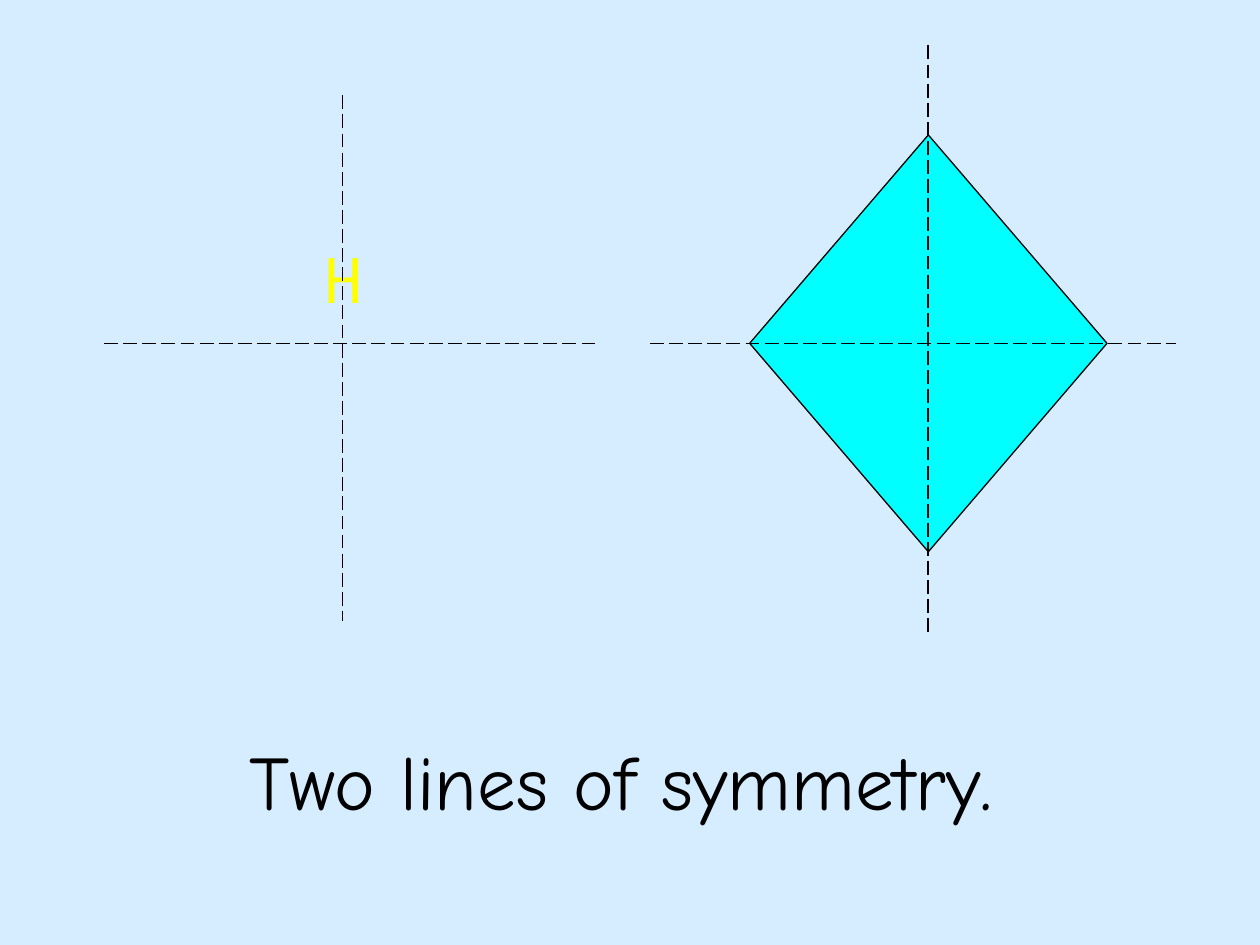
from dataclasses import dataclass

from lxml.etree import SubElement
from pptx import Presentation
from pptx.dml.color import RGBColor
from pptx.enum.dml import MSO_LINE
from pptx.enum.shapes import MSO_CONNECTOR, MSO_SHAPE
from pptx.enum.text import MSO_ANCHOR as Anchor, PP_ALIGN as Align
from pptx.oxml.ns import qn
from pptx.slide import Slide
from pptx.util import Pt

COLORS = {"sky": "D6ECFF", "ink": "000000", "letter": "FFFF00", "diamond": "00FFFF"}


@dataclass(frozen=True)
class Box:
    left: float
    top: float
    width: float
    height: float

    def lengths(self) -> tuple:
        return Pt(self.left), Pt(self.top), Pt(self.width), Pt(self.height)


@dataclass(frozen=True)
class Label:
    text: str
    box: Box
    font: str
    size: float
    color: str
    anchor: Anchor
    wrap: bool


@dataclass(frozen=True)
class Axes:
    """A vertical and a horizontal line of symmetry crossing at (x, y)."""
    x: float
    y: float
    left: float
    right: float
    top: float
    bottom: float


LETTER = Label("H", Box(105.1, 133.9, 182.2, 133.2), "Roboto Condensed", 36,
               "letter", Anchor.TOP, False)
CAPTION = Label("Two lines of symmetry.", Box(31, 400.3, 648, 90), "Comic Neue", 44,
                "ink", Anchor.MIDDLE, True)
DIAMOND = Box(428.4, 77.1, 204.2, 238.2)
LETTER_AXES = Axes(x=195.7, y=196.3, left=59.5, right=342.7, top=54.5, bottom=355)
DIAMOND_AXES = Axes(x=530.2, y=196.3, left=371.5, right=672, top=26, bottom=361)


def rgb(name: str) -> RGBColor:
    return RGBColor.from_string(COLORS[name])


def add_label(slide: Slide, label: Label) -> None:
    frame = slide.shapes.add_textbox(*label.box.lengths()).text_frame
    frame.word_wrap = label.wrap
    frame.vertical_anchor = label.anchor
    paragraph = frame.paragraphs[0]
    paragraph.text = label.text
    paragraph.alignment = Align.CENTER
    paragraph.font.name = label.font
    paragraph.font.size = Pt(label.size)
    paragraph.font.color.rgb = rgb(label.color)


def add_diamond(slide: Slide, box: Box) -> None:
    diamond = slide.shapes.add_shape(MSO_SHAPE.DIAMOND, *box.lengths())
    diamond.shadow.inherit = False
    diamond.fill.solid()
    diamond.fill.fore_color.rgb = rgb("diamond")
    diamond.line.color.rgb = rgb("ink")
    diamond.line.width = Pt(0.75)


def add_axes(slide: Slide, axes: Axes) -> None:
    for ends in ((axes.x, axes.top, axes.x, axes.bottom),
                 (axes.left, axes.y, axes.right, axes.y)):
        axis = slide.shapes.add_connector(MSO_CONNECTOR.STRAIGHT, *map(Pt, ends))
        axis.line.color.rgb = rgb("ink")
        axis.line.width = Pt(1)
        axis.line.dash_style = MSO_LINE.LONG_DASH
        SubElement(axis.element.spPr, qn("a:effectLst"))


def main() -> None:
    deck = Presentation()
    deck.slide_width, deck.slide_height = Pt(720), Pt(540)
    slide = deck.slides.add_slide(deck.slide_layouts[6])
    slide.background.fill.solid()
    slide.background.fill.fore_color.rgb = rgb("sky")

    add_label(slide, CAPTION)
    add_label(slide, LETTER)
    add_axes(slide, LETTER_AXES)
    add_diamond(slide, DIAMOND)
    add_axes(slide, DIAMOND_AXES)
    deck.save("out.pptx")


if __name__ == "__main__":
    main()
